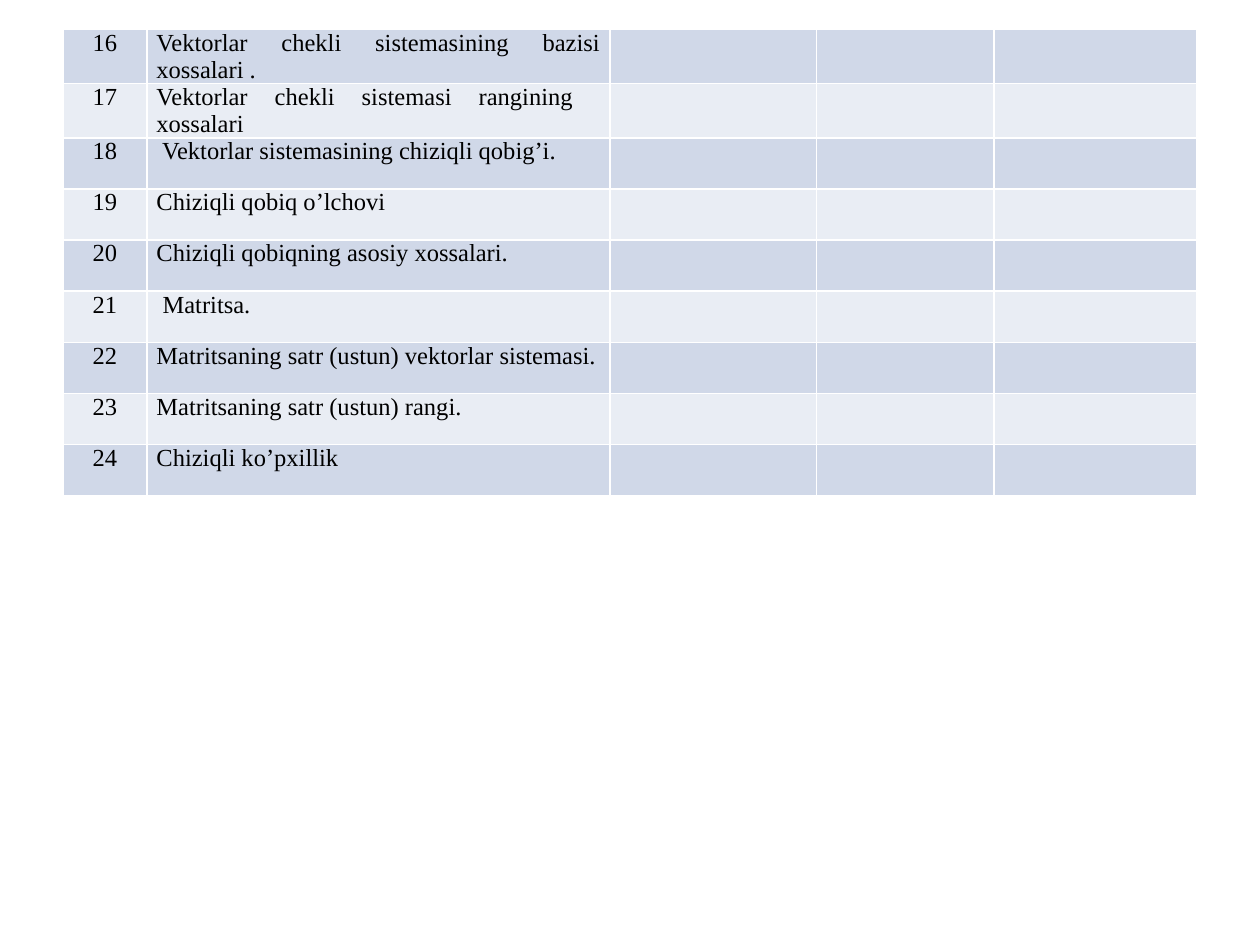
from dataclasses import dataclass

from lxml.etree import SubElement
from pptx import Presentation
from pptx.dml.color import RGBColor as Color
from pptx.enum.text import PP_ALIGN as Align
from pptx.oxml.ns import qn
from pptx.slide import Slide
from pptx.util import Pt

COLORS = {"dark_band": "D0D8E8", "light_band": "E9EDF4", "border": "FFFFFF", "text": "000000"}
COLUMN_WIDTHS = [48, 264.5, 118, 101.5, 116]
ROW_HEIGHT = 29.25
FIRST_NUMBER = 16
JUSTIFIED_ROWS = 2
TOPICS = [
    "Vektorlar chekli sistemasining bazisi xossalari .",
    "Vektorlar chekli sistemasi rangining  xossalari",
    " Vektorlar sistemasining chiziqli qobig’i.",
    "Chiziqli qobiq o’lchovi",
    "Chiziqli qobiqning asosiy xossalari.",
    " Matritsa.",
    "Matritsaning satr (ustun) vektorlar sistemasi.",
    "Matritsaning satr (ustun) rangi.",
    "Chiziqli ko’pxillik",
]


@dataclass
class TopicPage:
    """Style and current slide for a numbered topic table."""

    page: Slide
    font: str = "Times New Roman"
    size: float = 14
    inset: float = 5.4
    border_width: float = 1

    def add_borders(self, cell):
        properties = cell._tc.get_or_add_tcPr()
        for side in ("lnL", "lnR", "lnT", "lnB"):
            line = SubElement(properties, qn(f"a:{side}"), w=str(Pt(self.border_width)))
            fill = SubElement(line, qn("a:solidFill"))
            SubElement(fill, qn("a:srgbClr"), val=COLORS["border"])

    def style_cell(self, cell, band):
        cell.margin_left = cell.margin_right = Pt(self.inset)
        cell.margin_top = cell.margin_bottom = Pt(0)
        self.add_borders(cell)
        cell.fill.solid()
        cell.fill.fore_color.rgb = Color.from_string(COLORS[band])

    def write_cell(self, cell, text, align):
        cell.text_frame.text = text
        para = cell.text_frame.paragraphs[0]
        para.alignment = align
        for span in para.runs:
            span.font.name = self.font
            span.font.size = Pt(self.size)
            span.font.color.rgb = Color.from_string(COLORS["text"])

    def add_topic_table(self, left, top, topics):
        frame = self.page.shapes.add_table(
            len(topics), len(COLUMN_WIDTHS), Pt(left), Pt(top),
            Pt(sum(COLUMN_WIDTHS)), Pt(ROW_HEIGHT * len(topics)))
        table = frame.table
        for column, width in zip(table.columns, COLUMN_WIDTHS):
            column.width = Pt(width)
        for index, (row, topic) in enumerate(zip(table.rows, topics)):
            row.height = Pt(ROW_HEIGHT)
            band = "light_band" if index % 2 else "dark_band"
            for cell in row.cells:
                self.style_cell(cell, band)
            align = Align.JUSTIFY if index < JUSTIFIED_ROWS else Align.LEFT
            self.write_cell(table.cell(index, 0), str(FIRST_NUMBER + index), Align.CENTER)
            self.write_cell(table.cell(index, 1), topic, align)


def main():
    deck = Presentation()
    deck.slide_width, deck.slide_height = Pt(720), Pt(540)
    topic_page = TopicPage(deck.slides.add_slide(deck.slide_layouts[6]))
    topic_page.add_topic_table(36, 16.75, TOPICS)
    deck.save("out.pptx")


if __name__ == "__main__":
    main()
